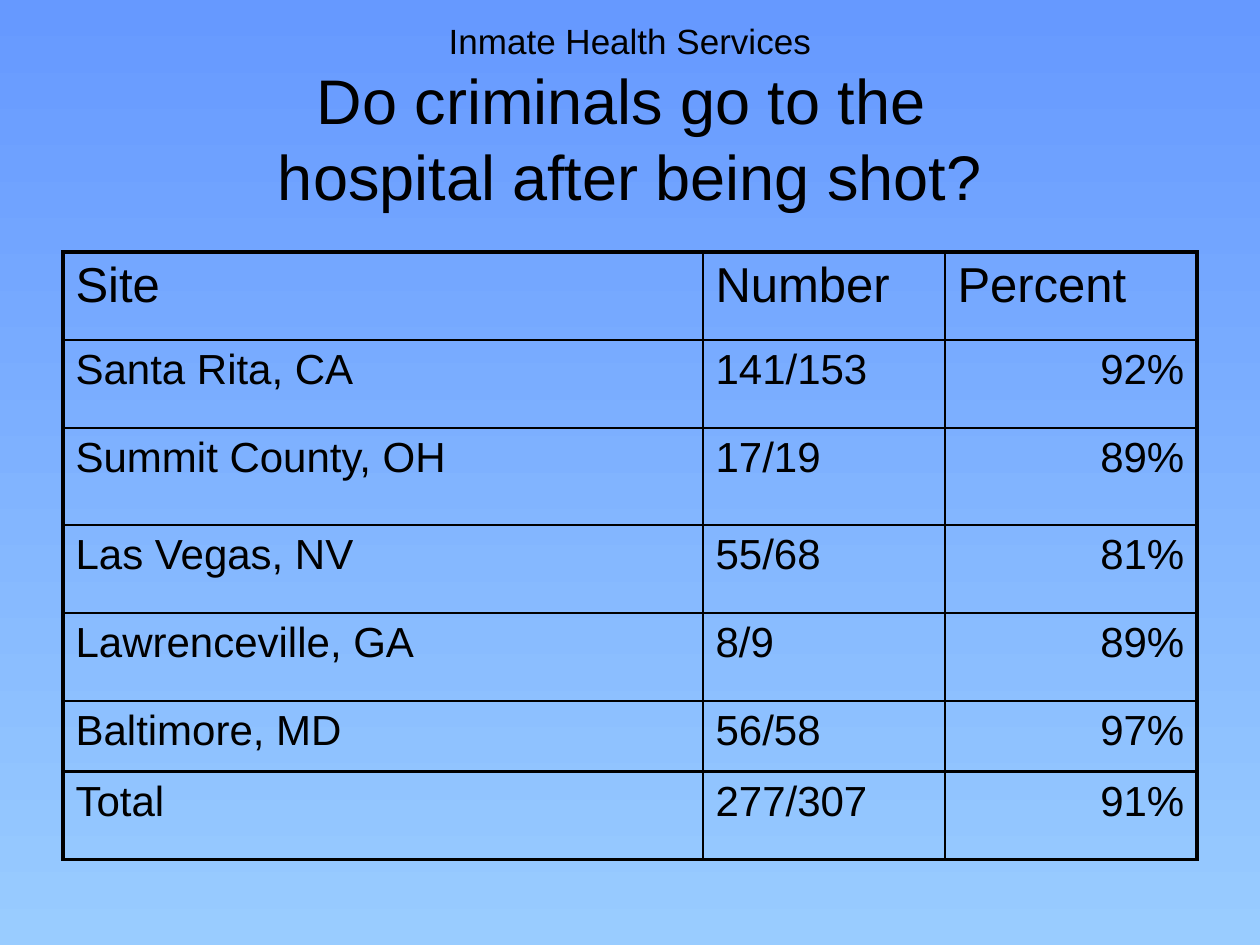
from lxml.etree import SubElement
from pptx import Presentation
from pptx.dml.color import RGBColor
from pptx.enum.text import MSO_ANCHOR, MSO_AUTO_SIZE, PP_ALIGN
from pptx.oxml.ns import qn
from pptx.util import Pt

EMU_PER_PX = 914400 / 126
BLACK = RGBColor(0x00, 0x00, 0x00)
SKY_TOP = RGBColor(0x66, 0x99, 0xFF)
SKY_BOTTOM = RGBColor(0x99, 0xCC, 0xFF)
THICK, THIN = Pt(2.25), Pt(1)

TITLE_LINES = [
    ("Inmate Health Services", 20),
    ("Do criminals go to the ", 36),
    ("hospital after being shot?", 36),
]
COLUMN_WIDTHS = [640, 242, 252]
ROW_HEIGHTS = [88, 88, 97, 88, 88, 71, 88]
ROWS = [
    ("Site", "Number", "Percent"),
    ("Santa Rita, CA", "141/153", "92%"),
    ("Summit County, OH", "17/19", "89%"),
    ("Las Vegas, NV", "55/68", "81%"),
    ("Lawrenceville, GA", "8/9", "89%"),
    ("Baltimore, MD", "56/58", "97%"),
    ("Total", "277/307", "91%"),
]


def px(length):
    return round(length * EMU_PER_PX)


class SlideBuilder:
    def __init__(self, slide, font_name="Arial", color=BLACK):
        self.slide = slide
        self.font_name = font_name
        self.color = color

    def background(self, top, bottom):
        fill = self.slide.background.fill
        fill.gradient()
        fill.gradient_angle = 270
        for stop, color in zip(fill.gradient_stops, (top, bottom)):
            stop.color.rgb = color

    def run(self, paragraph, text, size):
        run = paragraph.add_run()
        run.text = text
        run.font.name = self.font_name
        run.font.size = Pt(size)
        run.font.color.rgb = self.color

    def title(self, left, top, width, height, lines):
        shape = self.slide.shapes.title
        shape.left, shape.top = px(left), px(top)
        shape.width, shape.height = px(width), px(height)
        frame = shape.text_frame
        frame.auto_size = MSO_AUTO_SIZE.NONE
        frame.vertical_anchor = MSO_ANCHOR.MIDDLE
        paragraph = frame.paragraphs[0]
        paragraph.alignment = PP_ALIGN.CENTER
        for index, (text, size) in enumerate(lines):
            if index:
                paragraph.add_line_break()
            self.run(paragraph, text, size)

    def border(self, cell, side, width):
        line = SubElement(cell._tc.get_or_add_tcPr(), qn(f"a:ln{side}"), w=str(width))
        fill = SubElement(line, qn("a:solidFill"))
        SubElement(fill, qn("a:srgbClr"), val=str(self.color))

    def table(self, left, top, widths, heights, rows):
        """Draw a ruled table with a thick frame around the body and the total row."""
        last_row, last_column = len(rows) - 1, len(widths) - 1
        table = self.slide.shapes.add_table(
            len(rows), len(widths), px(left), px(top), px(sum(widths)), px(sum(heights))
        ).table
        table.first_row = table.horz_banding = False
        for column, width in zip(table.columns, widths):
            column.width = px(width)
        for row, height in zip(table.rows, heights):
            row.height = px(height)
        for r, texts in enumerate(rows):
            for c, text in enumerate(texts):
                cell = table.cell(r, c)
                thick_sides = {
                    "L": c == 0,
                    "R": c == last_column,
                    "T": r in (0, last_row),
                    "B": r in (last_row - 1, last_row),
                }
                for side, thick in thick_sides.items():
                    self.border(cell, side, THICK if thick else THIN)
                cell.fill.background()
                paragraph = cell.text_frame.paragraphs[0]
                if r and c == last_column:
                    paragraph.alignment = PP_ALIGN.RIGHT
                self.run(paragraph, text, 24 if r else 28)


def main():
    presentation = Presentation()
    presentation.slide_width, presentation.slide_height = px(1260), px(945)
    title_only = presentation.slide_layouts[5]
    builder = SlideBuilder(presentation.slides.add_slide(title_only))
    builder.background(SKY_TOP, SKY_BOTTOM)
    builder.title(63, 38, 1134, 157, TITLE_LINES)
    builder.table(63, 252, COLUMN_WIDTHS, ROW_HEIGHTS, ROWS)
    presentation.save("out.pptx")


if __name__ == "__main__":
    main()
